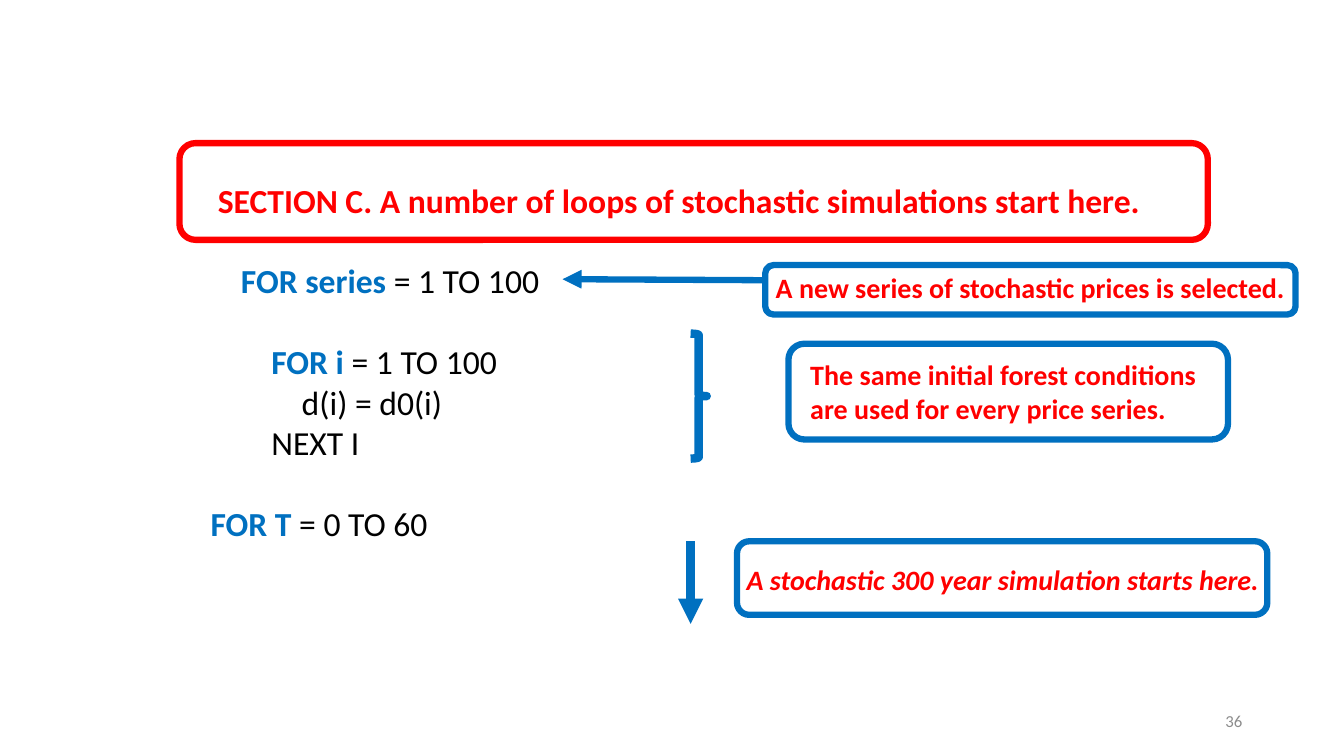
from pptx import Presentation
from pptx.dml.color import RGBColor
from pptx.enum.shapes import MSO_CONNECTOR, MSO_SHAPE
from pptx.enum.text import MSO_ANCHOR, PP_ALIGN
from pptx.oxml.ns import qn
from pptx.util import Inches, Pt
from lxml.etree import SubElement

RED = RGBColor(0xFF, 0x00, 0x00)
BLUE = RGBColor(0x00, 0x70, 0xC0)
BLACK = RGBColor(0x00, 0x00, 0x00)
GRAY = RGBColor(0x8C, 0x8C, 0x8C)
FONT = "Calibri"
CODE_LINE = Pt(29.3)

# Each line: indent, keyword, remainder, space before
CODE = [
    ("    ", "FOR series ", "= 1 TO 100", 0),
    ("        ", "FOR i", " = 1 TO 100", CODE_LINE),
    ("            ", "", "d(i) = d0(i)", 0),
    ("        ", "", "NEXT I", 0),
    ("", "FOR T", " = 0 TO 60", CODE_LINE),
]

# Each note: box, left and top inset, lines, italic
NOTES = [
    ((7.59, 2.63, 5.26, 0.49), (0.08, 0.03),
     ["A new series of stochastic prices is selected."], False),
    ((7.82, 3.41, 4.36, 0.95), (0.17, 0.09),
     ["The same initial forest conditions",
      "are used for every price series."], False),
    ((7.31, 5.37, 5.26, 0.73), (0.06, 0.18),
     ["A stochastic 300 year simulation starts here."], True),
]


def add_run(paragraph, text, size, color, bold=False, italic=False):
    run = paragraph.add_run()
    run.text = text
    font = run.font
    font.name, font.size, font.bold, font.italic = FONT, Pt(size), bold, italic
    font.color.rgb = color


def next_paragraph(frame, index):
    return frame.add_paragraph() if index else frame.paragraphs[0]


def add_outline(slide, kind, box, color, width):
    outline = slide.shapes.add_shape(kind, *map(Inches, box))
    outline.shadow.inherit = False
    outline.fill.background()
    outline.line.color.rgb = color
    outline.line.width = Pt(width)
    return outline


def add_note(slide, box, insets, lines, italic):
    note = add_outline(slide, MSO_SHAPE.ROUNDED_RECTANGLE, box, BLUE, 4.5)
    frame = note.text_frame
    frame.word_wrap = True
    frame.vertical_anchor = MSO_ANCHOR.TOP
    frame.margin_left, frame.margin_top = map(Inches, insets)
    frame.margin_right = frame.margin_bottom = 0
    for index, line in enumerate(lines):
        paragraph = next_paragraph(frame, index)
        paragraph.alignment = PP_ALIGN.LEFT
        add_run(paragraph, line, 20, RED, bold=True, italic=italic)


def add_arrow(slide, start, end, width):
    arrow = slide.shapes.add_connector(
        MSO_CONNECTOR.STRAIGHT, *map(Inches, start + end))
    arrow.line.color.rgb = BLUE
    arrow.line.width = Pt(width)
    SubElement(arrow.line._get_or_add_ln(), qn("a:tailEnd"), type="triangle")
    SubElement(arrow._element.spPr, qn("a:effectLst"))


def add_text_box(slide, box):
    frame = slide.shapes.add_textbox(*map(Inches, box)).text_frame
    frame.word_wrap = True
    return frame


def add_heading(slide):
    heading = slide.shapes.title
    heading.left, heading.top = Inches(2.06), Inches(1.73)
    heading.width, heading.height = Inches(9.7), Inches(0.5)
    frame = heading.text_frame
    frame.vertical_anchor = MSO_ANCHOR.MIDDLE
    paragraph = frame.paragraphs[0]
    paragraph.alignment = PP_ALIGN.LEFT
    add_run(paragraph,
            "SECTION C. A number of loops of stochastic simulations start here.",
            24, RED, bold=True)
    add_outline(slide, MSO_SHAPE.ROUNDED_RECTANGLE,
                (1.78, 1.42, 10.2, 0.96), RED, 4.5)


def add_code(slide):
    frame = add_text_box(slide, (1.99, 2.53, 4.6, 3))
    for index, (indent, keyword, remainder, gap) in enumerate(CODE):
        paragraph = next_paragraph(frame, index)
        paragraph.space_before = gap
        if keyword:
            if indent:
                add_run(paragraph, indent, 24, BLACK)
            add_run(paragraph, keyword, 24, BLUE, bold=True)
            add_run(paragraph, remainder, 24, BLACK)
        else:
            add_run(paragraph, indent + remainder, 24, BLACK)


def add_page_number(slide):
    frame = add_text_box(slide, (9.42, 6.95, 3, 0.4))
    frame.vertical_anchor = MSO_ANCHOR.MIDDLE
    paragraph = frame.paragraphs[0]
    paragraph.alignment = PP_ALIGN.RIGHT
    add_run(paragraph, "36", 12, GRAY)


def main():
    deck = Presentation()
    deck.slide_width, deck.slide_height = Inches(13.33), Inches(7.5)
    slide = deck.slides.add_slide(deck.slide_layouts[5])

    # Heading and program listing
    add_heading(slide)
    add_code(slide)

    # Explanations beside the loops
    for note in NOTES:
        add_note(slide, *note)
    add_outline(slide, MSO_SHAPE.RIGHT_BRACE, (6.85, 3.31, 0.16, 1.24), BLUE, 6)
    add_arrow(slide, (7.59, 2.78), (5.58, 2.77), 4.5)
    add_arrow(slide, (6.85, 5.37), (6.85, 6.19), 6)

    add_page_number(slide)
    deck.save("out.pptx")


if __name__ == "__main__":
    main()
